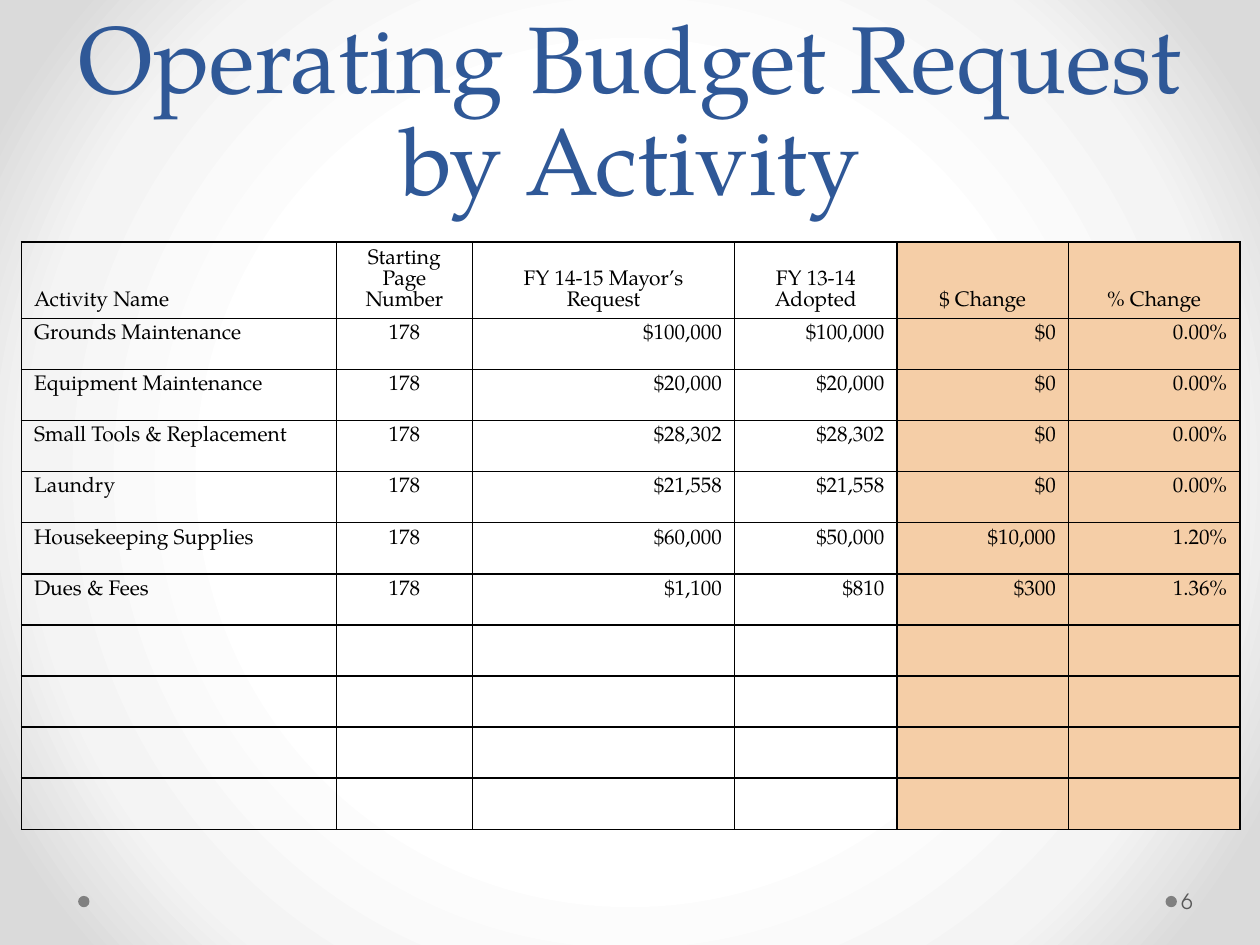
from lxml import etree
from pptx import Presentation
from pptx import util as u
from pptx.dml.color import RGBColor
from pptx.enum import shapes, text
from pptx.oxml import parse_xml
from pptx.oxml.ns import qn

WIDE, HIGH = u.Inches(10), u.Inches(7.5)
HUES = {"title": "2F5897", "ink": "000000", "change": "F5CEA7",
        "dot": "808080", "page": "595959"}
GLOW = ((50, "FFFFFF"), (76, "F4F4F4"), (92, "DADADA"))
SERIF, SANS = "TeX Gyre Pagella", "TeX Gyre Adventor"
LEFT, MID, RIGHT = (text.PP_ALIGN.LEFT, text.PP_ALIGN.CENTER,
                    text.PP_ALIGN.RIGHT)
COLS = (2.5, 1.08, 2.08, 1.29, 1.36, 1.36)
HEADS = ("Activity Name", "Starting Page Number", "FY 14-15 Mayor’s Request",
         "FY 13-14 Adopted", "$ Change", "% Change")
ROWS = (
    ("Grounds Maintenance", "178", "$100,000", "$100,000", "$0", "0.00%"),
    ("Equipment Maintenance", "178", "$20,000", "$20,000", "$0", "0.00%"),
    ("Small Tools & Replacement", "178", "$28,302", "$28,302", "$0", "0.00%"),
    ("Laundry", "178", "$21,558", "$21,558", "$0", "0.00%"),
    ("Housekeeping Supplies", "178", "$60,000", "$50,000", "$10,000", "1.20%"),
    ("Dues & Fees", "178", "$1,100", "$810", "$300", "1.36%"),
)
SPARE = 4


def hue(name):
    """Look up a named colour."""
    return RGBColor.from_string(HUES[name])


def area(left, top, width, height):
    """Turn percentages of the slide into a box."""
    return (int(WIDE * left / 100), int(HIGH * top / 100),
            int(WIDE * width / 100), int(HIGH * height / 100))


def style(para, face, size, ink, align=LEFT, lead=None):
    """Set the font and layout of a paragraph."""
    para.font.name, para.font.size = face, u.Pt(size)
    para.font.color.rgb = hue(ink)
    para.alignment = align
    if lead:
        para.line_spacing = u.Pt(lead)


def glow(slide):
    """Fill the background with a round gradient."""
    slide.background.fill.solid()
    prop = slide.background.fill._xPr
    stops = "".join(f'<a:gs pos="{pos * 1000}"><a:srgbClr val="{tint}"/></a:gs>'
                    for pos, tint in GLOW)
    grad = parse_xml(
        '<a:gradFill xmlns:a="http://schemas.openxmlformats.org/drawingml/2006/main"'
        f' rotWithShape="1"><a:gsLst>{stops}</a:gsLst><a:path path="circle">'
        '<a:fillToRect l="50000" t="50000" r="50000" b="50000"/>'
        '</a:path></a:gradFill>')
    prop.replace(prop.find(qn("a:solidFill")), grad)


def title(slide, box):
    """Place the heading at the foot of its box."""
    frame = slide.shapes.add_textbox(*box).text_frame
    frame.word_wrap = True
    frame.vertical_anchor = text.MSO_ANCHOR.BOTTOM
    frame.text = "Operating Budget Request by Activity"
    style(frame.paragraphs[0], SERIF, 54, "title", MID, 58)


def edge(cell):
    """Draw a thin line on all sides of a cell."""
    prop = cell._tc.get_or_add_tcPr()
    for side in ("a:lnL", "a:lnR", "a:lnT", "a:lnB"):
        line = etree.SubElement(prop, qn(side), w=str(u.Pt(1)))
        fill = etree.SubElement(line, qn("a:solidFill"))
        etree.SubElement(fill, qn("a:srgbClr"), val=HUES["ink"])


def budget(slide, box):
    """Build the budget table with its spare rows."""
    lines = (HEADS,) + ROWS + (("",) * len(COLS),) * SPARE
    grid = slide.shapes.add_table(len(lines), len(COLS), *box).table
    grid.first_row = grid.horz_banding = False
    for col, share in zip(grid.columns, COLS):
        col.width = int(box[2] * share / sum(COLS))
    head = int(box[3] * 0.13)
    for r, line in enumerate(lines):
        grid.rows[r].height = (box[3] - head) // (len(lines) - 1) if r else head
        for c, word in enumerate(line):
            cell = grid.cell(r, c)
            cell.text = word
            if r == 0:
                cell.vertical_anchor = text.MSO_ANCHOR.BOTTOM
            align = LEFT if c == 0 else MID if r == 0 or c == 1 else RIGHT
            style(cell.text_frame.paragraphs[0], SERIF, 12, "ink", align, 12)
            edge(cell)
            if c < 4:
                cell.fill.background()
            else:
                cell.fill.solid()
                cell.fill.fore_color.rgb = hue("change")


def footer(slide, box):
    """Place the two dots and the page number."""
    left, top, width, height = box
    size = int(WIDE * 0.009)
    for share in (0, 0.925):
        dot = slide.shapes.add_shape(
            shapes.MSO_SHAPE.OVAL, left + int(width * share),
            top + int(height * 0.4), size, size)
        dot.shadow.inherit = False
        dot.fill.solid()
        dot.fill.fore_color.rgb = hue("dot")
        dot.line.fill.background()
    start = int(width * 0.935)
    frame = slide.shapes.add_textbox(
        left + start, top, width - start, height).text_frame
    frame.word_wrap = True
    frame.margin_left = u.Inches(0.03)
    frame.margin_right = u.Inches(0.05)
    frame.vertical_anchor = text.MSO_ANCHOR.MIDDLE
    frame.text = "6"
    style(frame.paragraphs[0], SANS, 12, "page")


def main():
    """Build and save the slide."""
    deck = Presentation()
    deck.slide_width, deck.slide_height = WIDE, HIGH
    slide = deck.slides.add_slide(deck.slide_layouts[6])
    glow(slide)
    title(slide, area(5, 0, 90, 23.33))
    budget(slide, area(1.7, 25.6, 96.7, 62.2))
    footer(slide, area(6.2, 92.67, 93.3, 5.33))
    deck.save("out.pptx")


if __name__ == "__main__":
    main()
